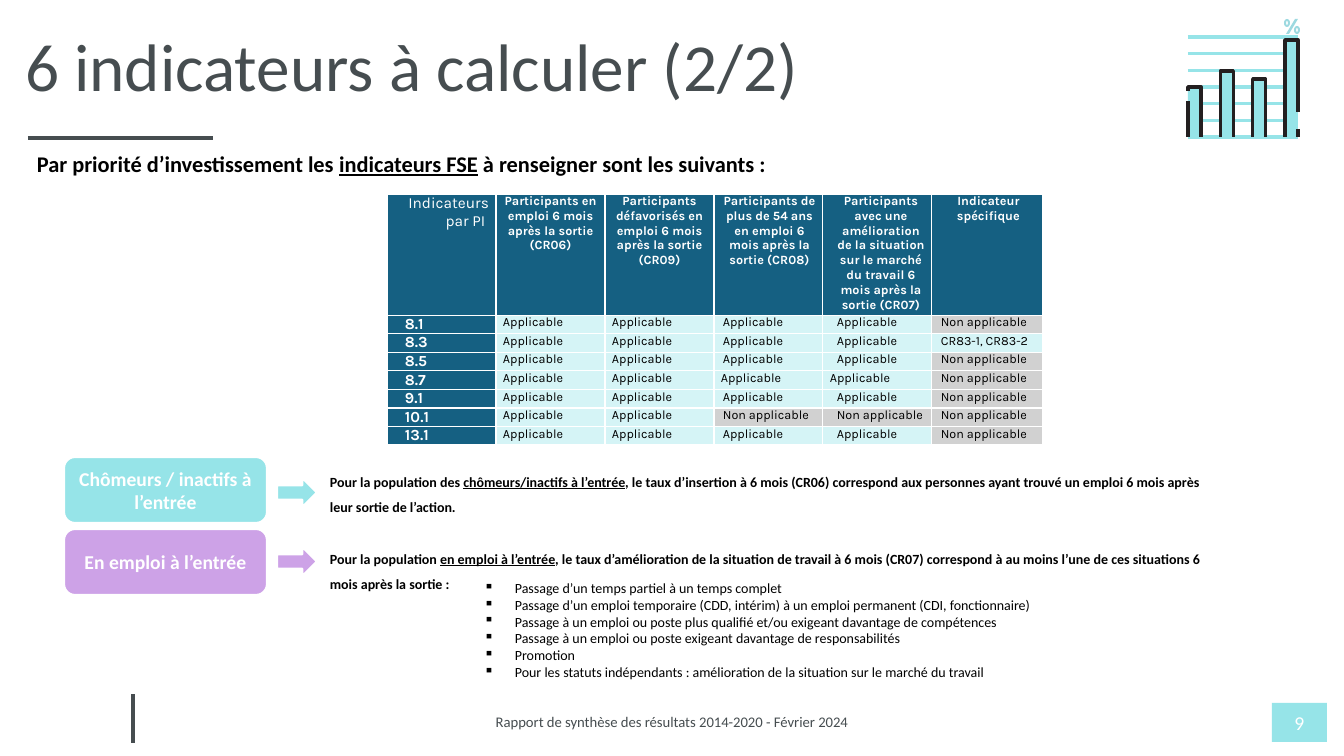
import math
from dataclasses import dataclass

import lxml.etree
import pptx
import pptx.dml.color
import pptx.enum.shapes
import pptx.enum.text
import pptx.oxml
import pptx.oxml.ns
import pptx.util

# Content
TITLE = "6 indicateurs à calculer (2/2)"
FOOTER = "Rapport de synthèse des résultats 2014-2020 - Février 2024"
NUMBER = "9"
# Every second piece of a sentence is underlined
INTRO = ("Par priorité d’investissement les ", "indicateurs FSE",
         " à renseigner sont les suivants :")
HEADS = ("Indicateurs par PI ",
         "Participants en emploi 6 mois après la sortie (CR06)",
         "Participants défavorisés en emploi 6 mois après la sortie (CR09)",
         "Participants de plus de 54 ans en emploi 6 mois après la sortie (CR08)",
         "Participants avec une amélioration de la situation sur le marché "
         "du travail 6 mois après la sortie (CR07)",
         "Indicateur spécifique")
YES, NO = "Applicable", "Non applicable"
ROWS = (("8.1", YES, YES, YES, YES, NO),
        ("8.3", YES, YES, YES, YES, "CR83-1, CR83-2"),
        ("8.5", YES, YES, YES, YES, NO),
        ("8.7", YES, YES, YES, YES, NO),
        ("9.1", YES, YES, YES, YES, NO),
        ("10.1", YES, YES, NO, NO, NO),
        ("13.1", YES, YES, YES, YES, NO))
CASES = (("Passage d’un temps partiel à un temps complet"),
         ("Passage d’un emploi temporaire (CDD, intérim) à un emploi permanent "
          "(CDI, fonctionnaire)"),
         ("Passage à un emploi ou poste plus qualifié et/ou exigeant davantage "
          "de compétences"),
         ("Passage à un emploi ou poste exigeant davantage de responsabilités"),
         ("Promotion"),
         ("Pour les statuts indépendants : amélioration de la situation sur le "
          "marché du travail"))


@dataclass(frozen=True)
class Theme:
    body: str = "Calibri"
    grid: str = "Karla"
    ink: str = "464D50"
    black: str = "000000"
    white: str = "FFFFFF"
    aqua: str = "96E4E8"
    sky: str = "9DD9E0"
    lilac: str = "CDA2E7"
    navy: str = "156082"
    pale: str = "D5F4F6"
    grey: str = "D1D1D1"
    dark: str = "231F20"
    title: float = 48
    lead: float = 16
    label: float = 14
    index: float = 11
    foot: float = 10.5
    text: float = 10
    cell: float = 9


T = Theme()
# Label, colour, label top, arrow top, sentence box, sentence
GROUPS = (("Chômeurs / inactifs à l’entrée", T.aqua, 457, 478, (320, 457, 914, 66),
           ("Pour la population des ", "chômeurs/inactifs à l’entrée",
            ", le taux d’insertion à 6 mois (CR06) correspond aux personnes "
            "ayant trouvé un emploi 6 mois après leur sortie de l’action.")),
          ("En emploi à l’entrée", T.lilac, 529, 547, (320, 534, 894, 66),
           ("Pour la population ", "en emploi à l’entrée",
            ", le taux d’amélioration de la situation de travail à 6 mois (CR07) "
            "correspond à au moins l’une de ces situations 6 mois après la sortie :")))

# Icon bars: top, foot of right edge, foot of left edge
BASE = 137
BARS = ((87, BASE, 91), (71, BASE, BASE), (79, BASE, BASE), (40, 112, BASE))

Pt = pptx.util.Pt
SHAPE = pptx.enum.shapes.MSO_SHAPE
ALIGN = pptx.enum.text.PP_ALIGN
ANCHOR = pptx.enum.text.MSO_ANCHOR


def px(n):
    return round(n * 914400 / 100.8)


def rgb(code):
    return pptx.dml.color.RGBColor.from_string(code)


def style(run, size, color, bold=False, face=T.body):
    font = run.font
    font.name, font.size, font.bold = face, Pt(size), bold
    font.color.rgb = rgb(color)


def paint(shape, fill=None, line=None, width=1.5):
    shape.shadow.inherit = False
    if fill:
        shape.fill.solid()
        shape.fill.fore_color.rgb = rgb(fill)
    else:
        shape.fill.background()
    if line:
        shape.line.color.rgb = rgb(line)
        shape.line.width = Pt(width)
    else:
        shape.line.fill.background()


def block(kind, box, fill, line=None):
    shape = slide.shapes.add_shape(kind, *map(px, box))
    paint(shape, fill, line)
    return shape


def rule(x1, y1, x2, y2, color, width):
    line = slide.shapes.add_connector(
        pptx.enum.shapes.MSO_CONNECTOR.STRAIGHT, *map(px, (x1, y1, x2, y2)))
    line.line.color.rgb = rgb(color)
    line.line.width = Pt(width)
    lxml.etree.SubElement(line._element.spPr, pptx.oxml.ns.qn("a:effectLst"))


def outline(paths, closed, fill=None, line=None):
    start = paths[0][0]
    pen = slide.shapes.build_freeform(px(start[0]), px(start[1]))
    for path in paths:
        pts = [(px(x), px(y)) for x, y in path]
        if path is not paths[0]:
            pen.move_to(*pts[0])
        pen.add_line_segments(pts[1:], close=closed)
    paint(pen.convert_to_shape(), fill, line, 2.38)


def label(shape, text, size, color, bold=False, align=ALIGN.CENTER):
    frame = shape.text_frame
    frame.text = text
    frame.word_wrap = True
    frame.vertical_anchor = ANCHOR.MIDDLE
    for para in frame.paragraphs:
        para.alignment = align
        style(para.runs[0], size, color, bold)
    return frame


def sentence(box, parts, size):
    frame = slide.shapes.add_textbox(*map(px, box)).text_frame
    frame.word_wrap = True
    for i, part in enumerate(parts):
        run = frame.paragraphs[0].add_run()
        run.text = part
        style(run, size, T.black, True)
        run.font.underline = i % 2 == 1
    return frame


def border(cell):
    props = cell._tc.get_or_add_tcPr()
    for i, side in enumerate(("lnL", "lnR", "lnT", "lnB")):
        props.insert(i, pptx.oxml.parse_xml(
            f'<a:{side} {pptx.oxml.ns.nsdecls("a")} w="12700"><a:solidFill>'
            f'<a:srgbClr val="{T.white}"/></a:solidFill></a:{side}>'))


deck = pptx.Presentation()
deck.slide_width, deck.slide_height = px(1344), px(756)
slide = deck.slides.add_slide(deck.slide_layouts[5])

# Title and frame
title = slide.shapes.title
title.left, title.top, title.width, title.height = map(px, (15, 19, 1258, 92))
frame = label(title, TITLE, T.title, T.ink, align=ALIGN.LEFT)
frame.vertical_anchor = ANCHOR.TOP
frame.auto_size = pptx.enum.text.MSO_AUTO_SIZE.NONE
rule(28, 138, 213, 138, T.ink, 3)
rule(133, 743, 133, 694, T.ink, 2.25)
label(block(SHAPE.RECTANGLE, (1272, 703, 55, 39), T.aqua), NUMBER, T.label, T.white)
foot = slide.shapes.add_textbox(*map(px, (302, 703, 740, 39)))
para = label(foot, FOOTER, T.foot, T.ink).paragraphs[0]
para.line_spacing, para.space_before = 0.9, Pt(10)

# Bar icon
for i in range(7):
    y = 37 + i * (BASE - 37) / 6
    rule(1188, y, 1298, y, T.aqua, 2.38)
for i, (top, right, left) in enumerate(BARS):
    x = 1188 + i * 97 / 3
    block(SHAPE.RECTANGLE, (x, top, 13, BASE - top), T.aqua)
    outline([[(x + 13, right), (x + 13, top), (x, top), (x, left)]], False, line=T.dark)
rule(1188, 101, 1188, BASE, T.dark, 2.38)
rule(1298, BASE, 1298, 129, T.dark, 2.38)

# Percent sign: two rings and a slash
rings = [[(cx + rx * math.cos(k * math.pi / 8), cy + ry * math.sin(k * math.pi / 8))
          for k in range(16)]
         for cx, cy in ((1287, 23), (1297, 30)) for rx, ry in ((3, 4), (1, 2))]
slash = [(1295, 19), (1298, 19), (1289, 34), (1286, 34)]
outline(rings + [slash], True, fill=T.sky)

# Indicator table
grid = slide.shapes.add_table(len(ROWS) + 1, len(HEADS),
                              *map(px, (387, 194, 656, 247))).table
grid.first_row = grid.horz_banding = False
for c, column in enumerate(grid.columns):
    column.width = px(111 if c == 5 else 109)
INDENTS = (11, 0, 0, 2, 7, 2)
for r, words in enumerate((HEADS,) + ROWS):
    grid.rows[r].height = px(18 if r else 121)
    for c, word in enumerate(words):
        cell = grid.cell(r, c)
        cell.margin_left = cell.margin_right = px(7)
        cell.margin_top = cell.margin_bottom = 0
        cell.text = word
        para = cell.text_frame.paragraphs[0]
        head = r == 0 or c == 0
        if r == 0:
            para.alignment = ALIGN.CENTER if c else ALIGN.RIGHT
        if not (words[0] == "8.7" and c in (3, 4)):
            para._p.get_or_add_pPr().set("marL", str(px(INDENTS[c])))
        style(para.runs[0], T.cell if c else T.index, T.white if head else T.black,
              head and r + c > 0, T.grid)
        cell.fill.solid()
        cell.fill.fore_color.rgb = rgb(T.navy if head else T.grey if word == NO else T.pale)
        border(cell)

# Sentences, labels and arrows
sentence((27, 145, 997, 37), INTRO, T.lead)
for name, color, top, tip, box, parts in GROUPS:
    frame = sentence(box, parts, T.text)
    frame.vertical_anchor = ANCHOR.MIDDLE
    frame.paragraphs[0].line_spacing = 1.5
    frame.paragraphs[0].space_after = Pt(4)
    label(block(SHAPE.ROUNDED_RECTANGLE, (64, top, 203, 66), color, T.white),
          name, T.label, T.white, True)
    block(SHAPE.RIGHT_ARROW, (277, tip, 40, 29), color, T.white)

# Bulleted situations
cases = slide.shapes.add_textbox(*map(px, (474, 574, 613, 112)))
for para in label(cases, "\n".join(CASES), T.text, T.black, align=ALIGN.LEFT).paragraphs:
    props = para._p.get_or_add_pPr()
    props.set("marL", str(px(31)))
    props.set("indent", str(-px(31)))
    lxml.etree.SubElement(props, pptx.oxml.ns.qn("a:buChar")).set("char", "▪")

deck.save("out.pptx")
